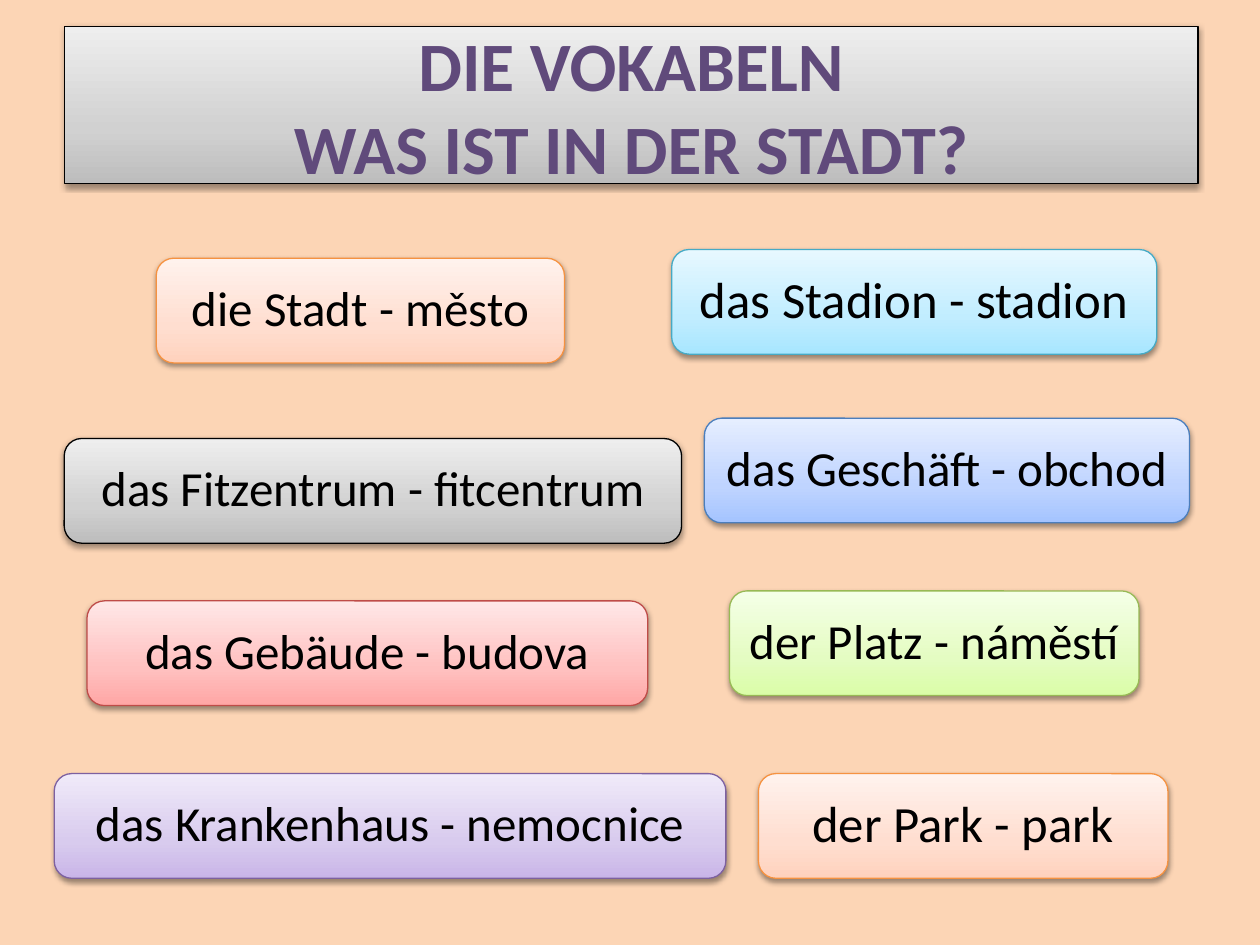
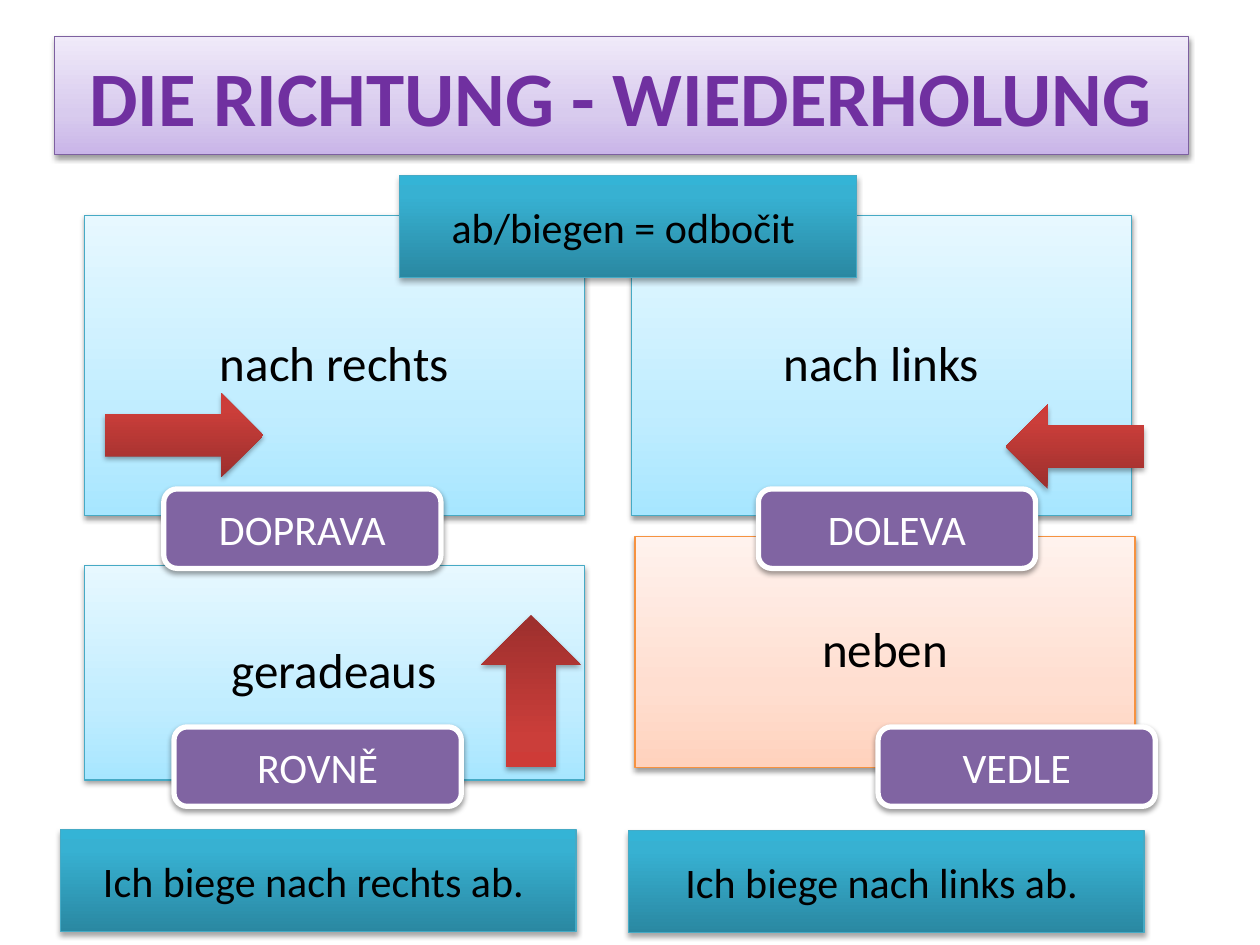
from copy import deepcopy
from dataclasses import dataclass
from typing import Optional

from lxml.etree import SubElement
from pptx import Presentation
from pptx.dml.color import RGBColor
from pptx.enum.shapes import MSO_SHAPE as Preset
from pptx.enum.text import MSO_ANCHOR as Anchor, PP_ALIGN as Align
from pptx.oxml.ns import qn
from pptx.util import Pt

FONT = "Calibri"
BLANK_LAYOUT = 6

BLACK = RGBColor(0x00, 0x00, 0x00)
WHITE = RGBColor(0xFF, 0xFF, 0xFF)
PEACH = RGBColor(0xFC, 0xD5, 0xB5)
PLUM = RGBColor(0x60, 0x4A, 0x7B)
VIOLET = RGBColor(0x70, 0x30, 0xA0)
TAG_PURPLE = RGBColor(0x80, 0x64, 0xA2)
AQUA_LINE = RGBColor(0x46, 0xAA, 0xC5)


@dataclass(frozen=True)
class Shadow:
    distance: float
    opacity: int
    blur: float = 3.15


@dataclass(frozen=True)
class Skin:
    """Fill colours from bottom to top (one colour means solid), outline and shadow."""
    colors: tuple
    line: Optional[RGBColor] = None
    line_width: float = 0.75
    middle: float = 0.35
    shadow: Shadow = Shadow(1.57, 38)


def shades(*hex_codes):
    return tuple(RGBColor.from_string(code) for code in hex_codes)


DEEP_SHADOW = Shadow(1.81, 35)
GRAY = Skin(shades("BDBDBD", "D1D1D1", "EEEEEE"), BLACK)
ORANGE = Skin(shades("FFD2BD", "FFDED0", "FFF2ED"), RGBColor(0xF6, 0x92, 0x40))
BLUE = Skin(shades("A4C4FF", "BFD4FF", "E6EEFF"), RGBColor(0x4B, 0x7E, 0xBC))
RED = Skin(shades("FFA6A5", "FFC0BF", "FFE7E7"), RGBColor(0xBF, 0x4C, 0x48))
GREEN = Skin(shades("DAFDA7", "E4FCC2", "F5FFE7"), RGBColor(0x98, 0xB9, 0x55))
LILAC = Skin(shades("C9B5E8", "D8CBEE", "F0EAF9"), RGBColor(0x7D, 0x60, 0xA0))
AQUA = Skin(shades("A7E6FF", "C1EDFF", "E7F8FF"), AQUA_LINE)
TEAL = Skin(shades("2A88A2", "37B1D2", "34B4D6"), AQUA_LINE,
            middle=0.8, shadow=DEEP_SHADOW)
ARROW_RED = Skin(shades("9C2F2D", "CB3E3A", "CE3B37"),
                 middle=0.8, shadow=DEEP_SHADOW)
TAG = Skin((TAG_PURPLE,), WHITE, 3)

FRAME_FORMAT = {
    "word_wrap": True, "vertical_anchor": Anchor.MIDDLE,
    "margin_left": Pt(6), "margin_right": Pt(6),
    "margin_top": Pt(3.6), "margin_bottom": Pt(3.6),
}


def set_all(target, values):
    for name, value in values.items():
        setattr(target, name, value)


def paint(shape, skin):
    if len(skin.colors) == 1:
        shape.fill.solid()
        shape.fill.fore_color.rgb = skin.colors[0]
    else:
        shape.fill.gradient()
        shape.fill.gradient_angle = 90
        stop_list = shape._element.find(".//" + qn("a:gsLst"))
        stop_list.insert(1, deepcopy(stop_list[0]))
        places = (0, skin.middle, 1)
        for stop, place, color in zip(shape.fill.gradient_stops, places, skin.colors):
            stop.position = place
            stop.color.rgb = color
    if skin.line is None:
        shape.line.fill.background()
    else:
        shape.line.color.rgb = skin.line
        shape.line.width = Pt(skin.line_width)


def cast_shadow(shape, shadow):
    shape.shadow.inherit = False
    effects = shape._element.spPr.find(qn("a:effectLst"))
    outer = SubElement(effects, qn("a:outerShdw"), {
        "blurRad": str(Pt(shadow.blur)), "dist": str(Pt(shadow.distance)),
        "dir": "5400000", "rotWithShape": "0"})
    color = SubElement(outer, qn("a:srgbClr"), val=str(BLACK))
    SubElement(color, qn("a:alpha"), val=str(shadow.opacity * 1000))


def add_block(slide, preset, box, skin):
    block = slide.shapes.add_shape(preset, *map(Pt, box))
    paint(block, skin)
    cast_shadow(block, skin.shadow)
    return block


def write(block, text, size, color=BLACK, bold=False, spacing=1.0):
    """Fill a block with one centred paragraph; newlines become line breaks."""
    set_all(block.text_frame, FRAME_FORMAT)
    paragraph = block.text_frame.paragraphs[0]
    set_all(paragraph, {"alignment": Align.CENTER, "line_spacing": spacing})
    for number, line in enumerate(text.split("\n")):
        if number:
            paragraph.add_line_break()
        run = paragraph.add_run()
        run.text = line
        set_all(run.font, {"name": FONT, "size": Pt(size), "bold": bold})
        run.font.color.rgb = color


def add_title(slide, text, box, skin, size, color):
    write(add_block(slide, Preset.RECTANGLE, box, skin), text, size, color, bold=True)


def add_word_card(slide, text, left, top, width, skin, size=28):
    card = add_block(slide, Preset.ROUNDED_RECTANGLE, (left, top, width, 59.8), skin)
    write(card, text, size, spacing=0.9)


def add_panel(slide, text, left, top, height, skin):
    panel = add_block(slide, Preset.RECTANGLE, (left, top, 285.8, height), skin)
    write(panel, text, 28, spacing=0.9)


def add_translation(slide, text, left, top, width=158.4):
    tag = add_block(slide, Preset.FLOWCHART_ALTERNATE_PROCESS,
                    (left, top, width, 45.4), TAG)
    write(tag, text, 24, WHITE)


def add_sentence(slide, text, left, top, width=294.5):
    bar = add_block(slide, Preset.FLOWCHART_PROCESS, (left, top, width, 58.3), TEAL)
    write(bar, text, 24)


def add_slide(deck, background):
    slide = deck.slides.add_slide(deck.slide_layouts[BLANK_LAYOUT])
    slide.background.fill.solid()
    slide.background.fill.fore_color.rgb = background
    return slide


def build_vocabulary(deck):
    slide = add_slide(deck, PEACH)
    add_title(slide, "DIE VOKABELN\nWAS IST IN DER STADT?",
              (36.7, 15, 648, 90), GRAY, 39.6, PLUM)
    for card in (
        ("die Stadt - město", 89.3, 147.6, 233.3, ORANGE),
        ("das Geschäft - obchod", 402.5, 239, 277.2, BLUE),
        ("das Fitzentrum - fitcentrum", 36.7, 250.6, 352.8, GRAY),
        ("das Gebäude - budova", 49.7, 343.4, 320.4, RED),
        ("der Platz - náměstí", 416.9, 337.7, 234, GREEN),
        ("das Krankenhaus - nemocnice", 31, 442.1, 383.8, LILAC),
        ("das Stadion - stadion", 383.8, 142.6, 277.2, AQUA, 29),
        ("der Park - park", 433.4, 442.1, 234, ORANGE, 29),
    ):
        add_word_card(slide, *card)


def build_directions(deck):
    slide = add_slide(deck, WHITE)
    add_title(slide, "DIE RICHTUNG - WIEDERHOLUNG",
              (31, 20.7, 648, 67.7), LILAC, 44, VIOLET)
    for panel in (
        ("nach rechts", 48.2, 123.1, 171.4, AQUA),
        ("nach links", 360.7, 123.1, 171.4, AQUA),
        ("geradeaus", 48.2, 323.3, 122.4, AQUA),
        ("neben", 362.9, 306.7, 131.8, ORANGE),
    ):
        add_panel(slide, *panel)
    for translation in (
        ("DOPRAVA", 93.6, 279.4),
        ("DOLEVA", 433.4, 279.4),
        ("ROVNĚ", 99.4, 415.4, 164.2),
        ("VEDLE", 501.8, 415.4),
    ):
        add_translation(slide, *translation)

    straight_on = add_block(slide, Preset.DOWN_ARROW, (275, 351.4, 56.9, 87.1), ARROW_RED)
    straight_on._element.spPr.find(qn("a:xfrm")).set("flipV", "1")
    add_block(slide, Preset.RIGHT_ARROW, (59.8, 224.6, 90.7, 48.2), ARROW_RED)
    add_block(slide, Preset.LEFT_ARROW, (574.6, 231.1, 79.2, 48.2), ARROW_RED)

    for sentence in (
        ("Ich biege nach rechts ab. ", 34.6, 473.8),
        ("Ich biege nach links ab. ", 359.3, 474.5),
        ("ab/biegen = odbočit ", 228.2, 100.1, 261.4),
    ):
        add_sentence(slide, *sentence)


def main():
    deck = Presentation()
    set_all(deck, {"slide_width": Pt(720), "slide_height": Pt(540)})
    build_vocabulary(deck)
    build_directions(deck)
    deck.save("out.pptx")


if __name__ == "__main__":
    main()
